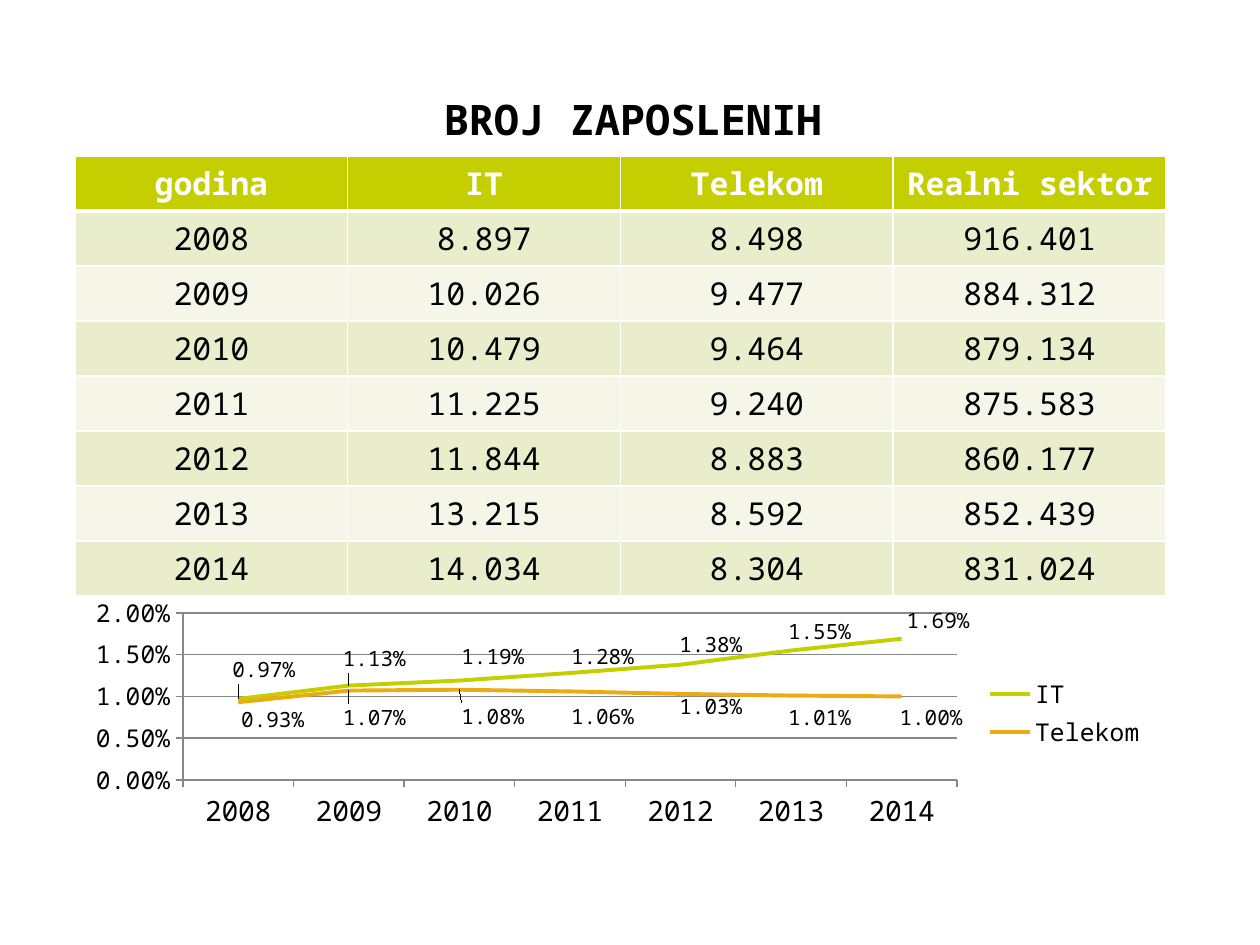
from dataclasses import dataclass

from lxml import etree
from pptx import Presentation, util as u
from pptx.chart.data import CategoryChartData
from pptx.dml.color import RGBColor
from pptx.enum import chart as ch, text
from pptx.oxml import ns

PX = 914400 / 126
FONT = "Noto Sans Mono"
COLORS = {
    "text": "000000", "white": "FFFFFF", "header": "C4CE00",
    "band_dark": "EAEDCC", "band_light": "F5F6E7",
    "it": "C4CE00", "telekom": "EAAC10", "grid": "878787",
}


@dataclass(frozen=True)
class Box:
    x: int
    y: int
    w: int
    h: int

    def emu(self) -> list[int]:
        return [round(v * PX) for v in (self.x, self.y, self.w, self.h)]


@dataclass(frozen=True)
class Line:
    """A chart series; nudges move each label from the right of its point."""
    name: str
    color: str
    values: list[float]
    nudges: list[tuple[int, int]]


TITLE = Box(74, 78, 1117, 72)
TABLE = Box(75, 156, 1091, 440)
CHART = Box(75, 591, 1081, 243)
PLOT = Box(183, 613, 774, 167)
LEGEND = Box(982, 673, 166, 80)

HEADER = ["godina", "IT", "Telekom", "Realni sektor"]
EMPLOYEES = [
    ["2008", "8.897", "8.498", "916.401"],
    ["2009", "10.026", "9.477", "884.312"],
    ["2010", "10.479", "9.464", "879.134"],
    ["2011", "11.225", "9.240", "875.583"],
    ["2012", "11.844", "8.883", "860.177"],
    ["2013", "13.215", "8.592", "852.439"],
    ["2014", "14.034", "8.304", "831.024"],
]
LINES = [
    Line("IT", "it", [0.0097, 0.0113, 0.0119, 0.0128, 0.0138, 0.0155, 0.0169],
         [(-11, -29), (-11, -27), (-3, -24), (-4, -16), (-6, -20), (-8, -19), (0, -18)]),
    Line("Telekom", "telekom", [0.0093, 0.0107, 0.0108, 0.0106, 0.0103, 0.0101, 0.01],
         [(-2, 17), (-11, 27), (-3, 27), (-4, 25), (-6, 13), (-8, 22), (-7, 21)]),
]


def rgb(name: str) -> RGBColor:
    return RGBColor.from_string(COLORS[name])


def style_font(font, size: int, color: str = "text", bold: bool = False) -> None:
    font.name, font.size, font.bold = FONT, u.Pt(size), bold
    font.color.rgb = rgb(color)


def add_run(tf, wording: str, size: int, color: str = "text", bold: bool = False) -> None:
    p = tf.paragraphs[0]
    p.alignment = text.PP_ALIGN.CENTER
    r = p.add_run()
    r.text = wording
    style_font(r.font, size, color, bold)


def add_title(s) -> None:
    tf = s.shapes.add_textbox(*TITLE.emu()).text_frame
    tf.word_wrap = True
    tf.vertical_anchor = text.MSO_ANCHOR.BOTTOM
    tf.margin_left = tf.margin_right = 0
    add_run(tf, "BROJ ZAPOSLENIH", 24, bold=True)


def set_borders(cell, widths: dict[str, int]) -> None:
    """Draw white borders, keyed by side (L, R, T, B), in points."""
    tc_pr = cell._tc.get_or_add_tcPr()
    for i, (side, width) in enumerate(widths.items()):
        ln = etree.Element(ns.qn(f"a:ln{side}"), w=str(u.Pt(width)))
        fill = etree.SubElement(ln, ns.qn("a:solidFill"))
        etree.SubElement(fill, ns.qn("a:srgbClr"), val=COLORS["white"])
        tc_pr.insert(i, ln)


def add_table(s) -> None:
    rows = [HEADER, *EMPLOYEES]
    table = s.shapes.add_table(len(rows), len(HEADER), *TABLE.emu()).table
    table.first_row = table.horz_banding = False
    for i, row in enumerate(rows):
        is_header = i == 0
        fill = "header" if is_header else "band_dark" if i % 2 else "band_light"
        for j, wording in enumerate(row):
            cell = table.cell(i, j)
            cell.margin_left = cell.margin_right = u.Inches(0.05)
            cell.fill.solid()
            cell.fill.fore_color.rgb = rgb(fill)
            set_borders(cell, {"L": 1, "R": 1, "T": 3 if i == 1 else 1,
                               "B": 3 if is_header else 1})
            add_run(cell.text_frame, wording, 18,
                    "white" if is_header else "text", is_header)


def make_layout(values: dict[str, float | str]):
    layout = etree.Element(ns.qn("c:layout"))
    manual = etree.SubElement(layout, ns.qn("c:manualLayout"))
    for tag, value in values.items():
        etree.SubElement(manual, ns.qn(f"c:{tag}"), val=str(value))
    return layout


def place(element, box: Box, after: str | None = None, inner: bool = False) -> None:
    """Fix a chart part at a box given in slide px."""
    for old in element.findall(ns.qn("c:layout")):
        element.remove(old)
    values = {"layoutTarget": "inner"} if inner else {}
    values |= {"xMode": "edge", "yMode": "edge",
               "x": round((box.x - CHART.x) / CHART.w, 4),
               "y": round((box.y - CHART.y) / CHART.h, 4),
               "w": round(box.w / CHART.w, 4), "h": round(box.h / CHART.h, 4)}
    index = 0 if after is None else element.index(element.find(ns.qn(after))) + 1
    element.insert(index, make_layout(values))


def style_line(series, line: Line) -> None:
    series.smooth = False
    series.format.line.color.rgb = rgb(line.color)
    series.format.line.width = u.Pt(2.25)
    series.marker.style = ch.XL_MARKER_STYLE.NONE
    for i, (dx, dy) in enumerate(line.nudges):
        label = series.points[i].data_label
        style_font(label.font, 12)
        label.position = ch.XL_LABEL_POSITION.RIGHT
        d_lbl = series._element.findall(".//" + ns.qn("c:dLbl"))[i]
        d_lbl.insert(1, make_layout({"x": round(dx / CHART.w, 4),
                                     "y": round(dy / CHART.h, 4)}))


def add_chart(s) -> None:
    data = CategoryChartData(number_format="0.00%")
    data.categories = [row[0] for row in EMPLOYEES]
    for line in LINES:
        data.add_series(line.name, line.values)
    chart = s.shapes.add_chart(ch.XL_CHART_TYPE.LINE, *CHART.emu(), data).chart
    chart.has_title = False
    style_font(chart.font, 18)
    chart.plots[0].vary_by_categories = False
    for series, line in zip(chart.plots[0].series, LINES):
        style_line(series, line)

    for axis, size in ((chart.category_axis, 16), (chart.value_axis, 14)):
        style_font(axis.tick_labels.font, size)
        axis.major_tick_mark = ch.XL_TICK_MARK.OUTSIDE
        axis.format.line.color.rgb = rgb("grid")
    values = chart.value_axis
    values.minimum_scale, values.maximum_scale, values.major_unit = 0, 0.02, 0.005
    values.tick_labels.number_format = "0.00%"
    values.tick_labels.number_format_is_linked = False
    values.has_major_gridlines = True
    values.major_gridlines.format.line.color.rgb = rgb("grid")

    chart.has_legend = True
    chart.legend.position = ch.XL_LEGEND_POSITION.RIGHT
    chart.legend.include_in_layout = False
    style_font(chart.legend.font, 14)
    place(chart.legend._element, LEGEND, after="c:legendPos")
    place(chart._chartSpace.chart.plotArea, PLOT, inner=True)


def main() -> None:
    prs = Presentation()
    prs.slide_width, prs.slide_height = u.Inches(10), u.Inches(7.5)
    s = prs.slides.add_slide(prs.slide_layouts[6])
    add_title(s)
    add_table(s)
    add_chart(s)
    prs.save("out.pptx")


if __name__ == "__main__":
    main()
